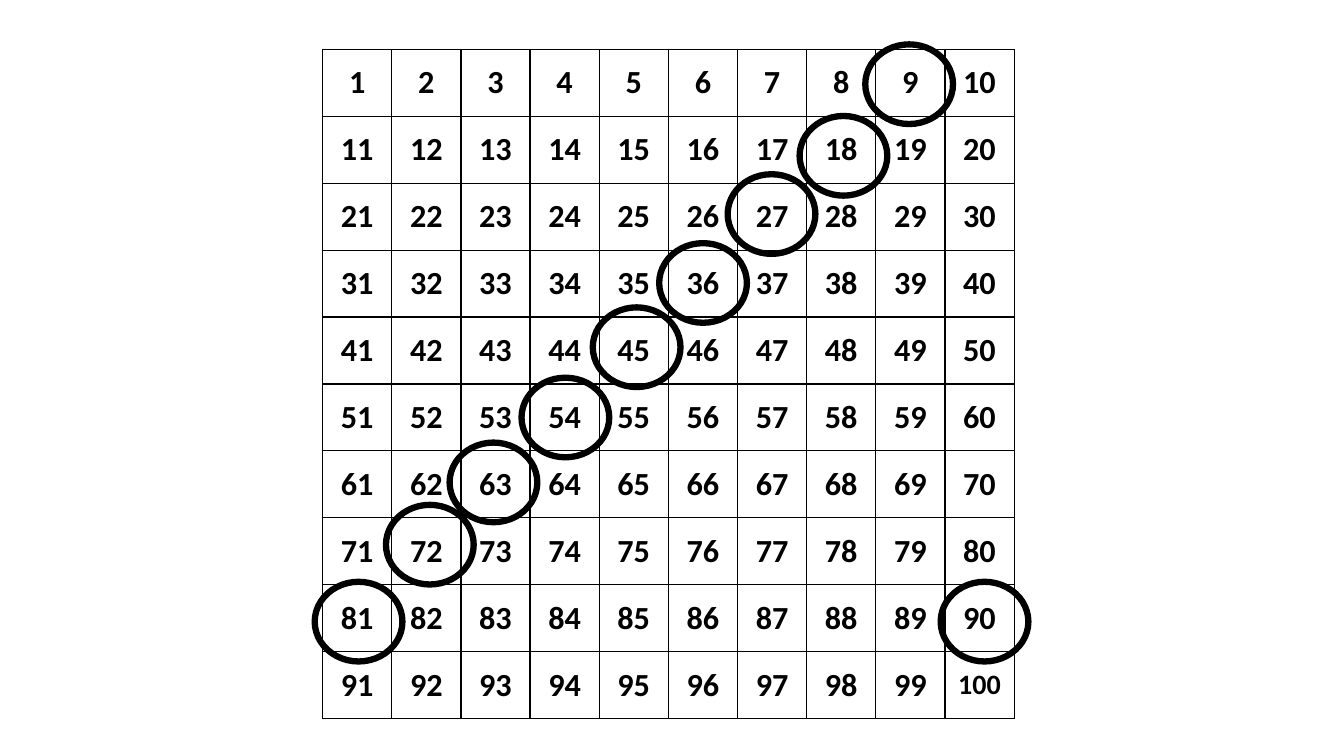
import pptx
import pptx.dml.color
import pptx.enum.shapes
import pptx.enum.text
import pptx.oxml
import pptx.oxml.ns
import pptx.util

COLORS = {"ink": "000000"}
SIDE = 10  # cells along each edge of the hundred chart

# Circled numbers, each with its shift from the cell centre in columns and rows
CIRCLED = {
    9: (-0.02, 0.02), 18: (0.03, 0.09), 45: (0.04, -0.05), 27: (-0.01, -0.04),
    36: (0, -0.01), 72: (0.05, -0.1), 81: (0.02, 0.05), 54: (0.01, 0),
    63: (-0.03, -0.03), 90: (0.07, 0.05),
}


def write(frame, text, *, size, font="Calibri", bold=True, color="ink"):
    paragraph = frame.paragraphs[0]
    paragraph.alignment = pptx.enum.text.PP_ALIGN.CENTER
    run = paragraph.add_run()
    run.text = text
    run.font.size = pptx.util.Pt(size)
    run.font.name = font
    run.font.bold = bold
    run.font.color.rgb = pptx.dml.color.RGBColor.from_string(COLORS[color])


class HundredChart:
    """Holds the slide and its grid; positions are given in columns and rows."""

    left, top = pptx.util.Inches(3.2), pptx.util.Inches(0.49)
    column = pptx.util.Inches(6.86) // SIDE
    row = pptx.util.Inches(6.64) // SIDE
    border, ring = 1, 4.5

    def __init__(self, slide):
        self.slide = slide

    def numbers(self):
        table = self.slide.shapes.add_table(
            SIDE, SIDE, self.left, self.top, self.column * SIDE, self.row * SIDE
        ).table
        table.first_row = table.horz_banding = False
        for line in table.columns:
            line.width = self.column
        for line in table.rows:
            line.height = self.row
        for index, cell in enumerate(table.iter_cells()):
            self.number(cell, index + 1)

    def number(self, cell, value):
        cell.margin_left = cell.margin_right = pptx.util.Inches(0.13)
        cell.margin_top = cell.margin_bottom = pptx.util.Inches(0.06)
        cell.vertical_anchor = pptx.enum.text.MSO_ANCHOR.MIDDLE
        write(cell.text_frame, str(value), size=20 if value == 100 else 23)
        self.outline(cell)
        cell.fill.background()

    def outline(self, cell):
        properties = cell._tc.get_or_add_tcPr()
        for edge in ("lnL", "lnR", "lnT", "lnB"):
            properties.append(pptx.oxml.parse_xml(
                f'<a:{edge} {pptx.oxml.ns.nsdecls("a")} w="{pptx.util.Pt(self.border)}">'
                f'<a:solidFill><a:srgbClr val="{COLORS["ink"]}"/></a:solidFill>'
                f'</a:{edge}>'
            ))

    def circle(self, value, shift_x, shift_y):
        row, column = divmod(value - 1, SIDE)
        width, height = pptx.util.Inches(0.87), pptx.util.Inches(0.79)
        center_x = self.left + (column + 0.5 + shift_x) * self.column
        center_y = self.top + (row + 0.5 + shift_y) * self.row
        ring = self.slide.shapes.add_shape(
            pptx.enum.shapes.MSO_SHAPE.OVAL,
            round(center_x - width / 2), round(center_y - height / 2), width, height,
        )
        ring.shadow.inherit = False
        ring.fill.background()
        ring.line.width = pptx.util.Pt(self.ring)
        ring.line.color.rgb = pptx.dml.color.RGBColor.from_string(COLORS["ink"])


def main():
    deck = pptx.Presentation()
    deck.slide_width = pptx.util.Inches(13.33)
    deck.slide_height = pptx.util.Inches(7.5)
    chart = HundredChart(deck.slides.add_slide(deck.slide_layouts[6]))

    # Numbers 1 to 100
    chart.numbers()

    # Circles around the multiples of nine
    for value, shift in CIRCLED.items():
        chart.circle(value, *shift)

    deck.save("out.pptx")


if __name__ == "__main__":
    main()
